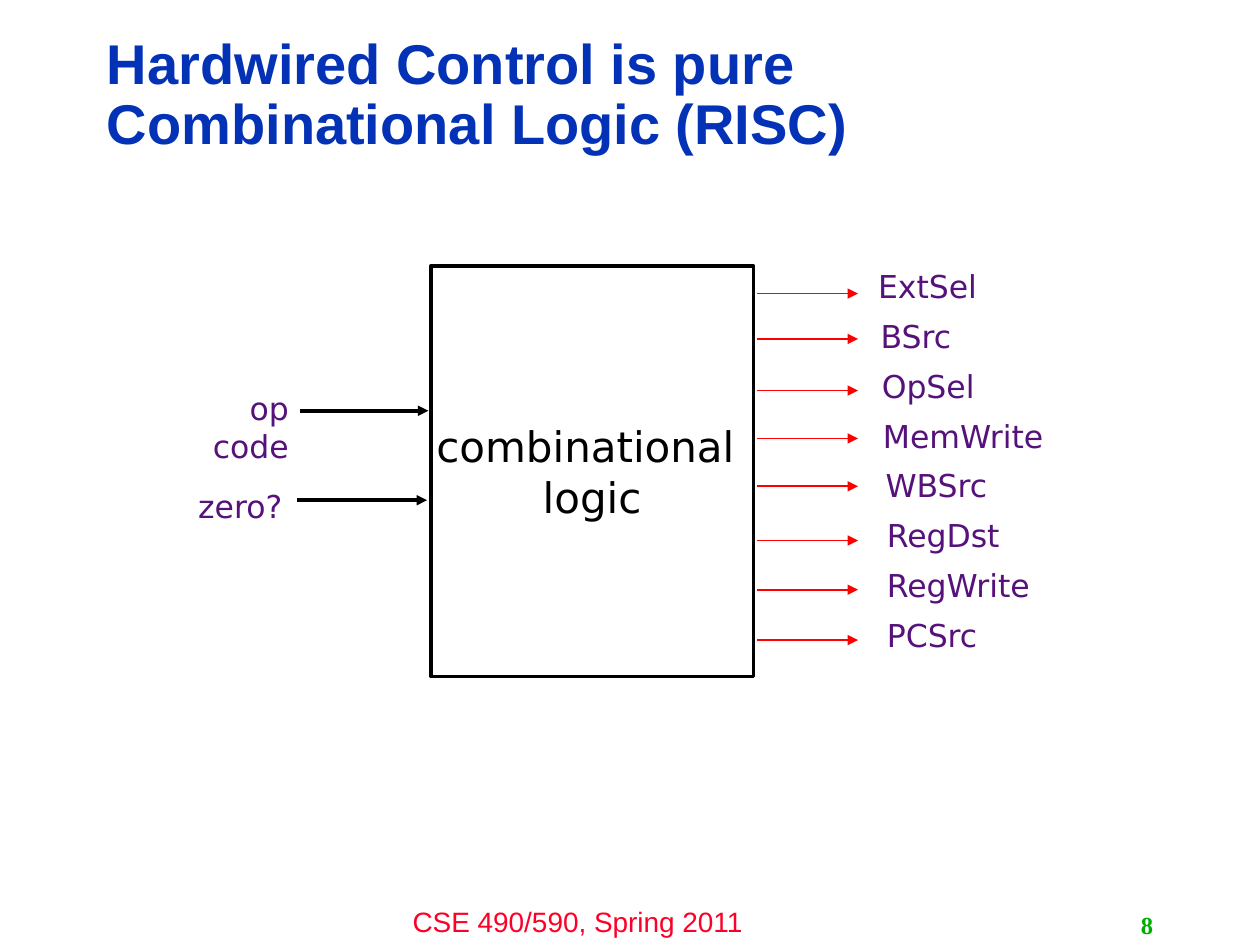
import pptx
import pptx.util
from pptx.dml.color import RGBColor
from pptx.enum.shapes import MSO_CONNECTOR, MSO_SHAPE
from pptx.enum.text import MSO_ANCHOR, PP_ALIGN
from pptx.oxml.ns import qn
from pptx.util import Inches
from lxml import etree

BLACK = RGBColor(0x00, 0x00, 0x00)
BLUE = RGBColor(0x03, 0x32, 0xB7)
PURPLE = RGBColor(0x56, 0x12, 0x7A)
RED = RGBColor(0xFF, 0x00, 0x00)
CRIMSON = RGBColor(0xFC, 0x01, 0x28)
GREEN = RGBColor(0x00, 0xAE, 0x00)

LABEL_HEIGHT = 0.4

# Name, label offset, label width, arrow height below the top of the block
CONTROL_SIGNALS = [
    ("ExtSel", 0.0, 0.99, 0.22),
    ("BSrc", 0.02, 0.78, 0.58),
    ("OpSel", 0.03, 0.94, 0.99),
    ("MemWrite", 0.04, 1.47, 1.37),
    ("WBSrc", 0.06, 1.02, 1.75),
    ("RegDst", 0.07, 1.1, 2.18),
    ("RegWrite", 0.07, 1.35, 2.57),
    ("PCSrc", 0.07, 0.93, 2.97),
]


def write_lines(frame, lines, size, color, font="DejaVu Sans", bold=False,
                align=PP_ALIGN.LEFT, anchor=MSO_ANCHOR.TOP, wrap=False):
    frame.word_wrap = wrap
    frame.vertical_anchor = anchor
    frame.text = "\n".join(lines)
    for paragraph in frame.paragraphs:
        paragraph.alignment = align
        paragraph.font.name = font
        paragraph.font.size = pptx.util.Pt(size)
        paragraph.font.bold = bold
        paragraph.font.color.rgb = color


def add_text(slide, box, text, size, color, **style):
    shape = slide.shapes.add_textbox(*map(Inches, box))
    write_lines(shape.text_frame, [text], size, color, **style)
    return shape


def add_arrow(slide, left, right, y, color, width):
    arrow = slide.shapes.add_connector(
        MSO_CONNECTOR.STRAIGHT, Inches(left), Inches(y), Inches(right), Inches(y))
    arrow.line.color.rgb = color
    arrow.line.width = pptx.util.Pt(width)
    etree.SubElement(arrow.line._get_or_add_ln(), qn("a:tailEnd"), type="triangle")
    etree.SubElement(arrow._element.spPr, qn("a:effectLst"))


def add_title(slide, box):
    title = add_text(slide, box, "Hardwired Control is pure Combinational Logic (RISC)",
                     32, BLUE, font="Arial", bold=True,
                     anchor=MSO_ANCHOR.MIDDLE, wrap=True)
    title.text_frame.paragraphs[0].line_spacing = 0.9


def add_logic_block(slide, box):
    block = slide.shapes.add_shape(MSO_SHAPE.RECTANGLE, *map(Inches, box))
    block.shadow.inherit = False
    block.fill.background()
    block.line.color.rgb = BLACK
    block.line.width = pptx.util.Pt(2)
    write_lines(block.text_frame, ["combinational ", "logic"], 24, BLACK,
                align=PP_ALIGN.CENTER, anchor=MSO_ANCHOR.MIDDLE)


def add_inputs(slide, block_box):
    left, top = block_box[:2]
    add_arrow(slide, left - 1.04, left - 0.02, top + 1.15, BLACK, 2)
    add_arrow(slide, left - 1.06, left - 0.03, top + 1.86, BLACK, 2)
    add_text(slide, (left - 2.13, top + 0.93, 1.1, LABEL_HEIGHT), "op code",
             18, PURPLE, align=PP_ALIGN.RIGHT, wrap=True)
    add_text(slide, (left - 1.95, top + 1.71, 0.87, LABEL_HEIGHT), "zero?",
             18, PURPLE, align=PP_ALIGN.RIGHT)


def add_control_signals(slide, block_box):
    left, top, width, _ = block_box
    right = left + width
    label_pitch = 2.77 / (len(CONTROL_SIGNALS) - 1)
    for index, (name, offset, label_width, arrow_y) in enumerate(CONTROL_SIGNALS):
        add_arrow(slide, right + 0.03, right + 0.83, top + arrow_y, RED, 1)
        label_top = top - 0.04 + index * label_pitch
        add_text(slide, (right + 0.89 + offset, label_top, label_width, LABEL_HEIGHT),
                 name, 18, PURPLE)


def add_footer(slide, course_box, number_box):
    add_text(slide, course_box, "CSE 490/590, Spring 2011", 16, CRIMSON,
             font="Arial", align=PP_ALIGN.CENTER, wrap=True)
    add_text(slide, number_box, "8", 14, GREEN, font="Times New Roman", bold=True,
             align=PP_ALIGN.RIGHT, anchor=MSO_ANCHOR.MIDDLE, wrap=True)


def main():
    presentation = pptx.Presentation()
    presentation.slide_width = Inches(10)
    presentation.slide_height = Inches(7.5)
    slide = presentation.slides.add_slide(presentation.slide_layouts[6])

    block_box = (3.42, 2.11, 2.56, 3.26)
    add_footer(slide, (2.92, 7.13, 3.33, 0.37), (7.17, 7.18, 2.08, 0.32))
    add_title(slide, (0.75, 0.36, 7.98, 0.81))
    add_logic_block(slide, block_box)
    add_inputs(slide, block_box)
    add_control_signals(slide, block_box)
    presentation.save("out.pptx")


if __name__ == "__main__":
    main()
